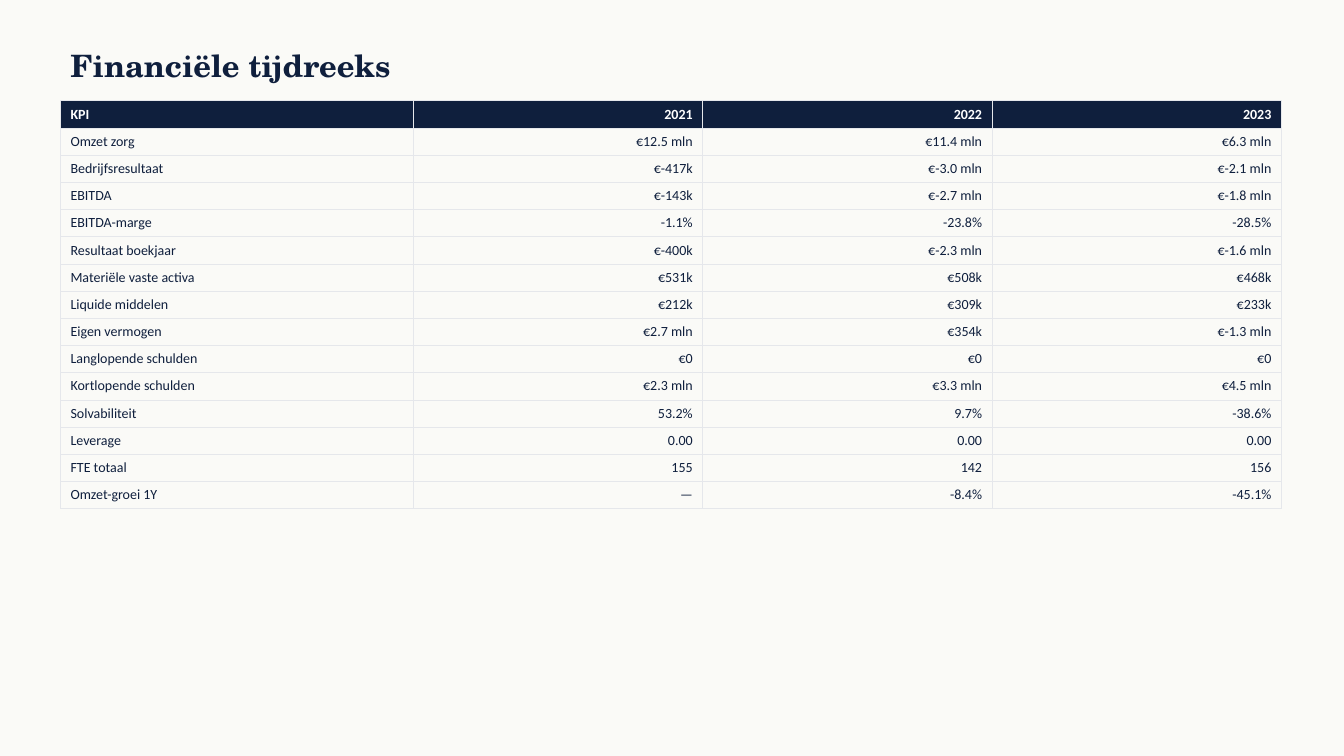
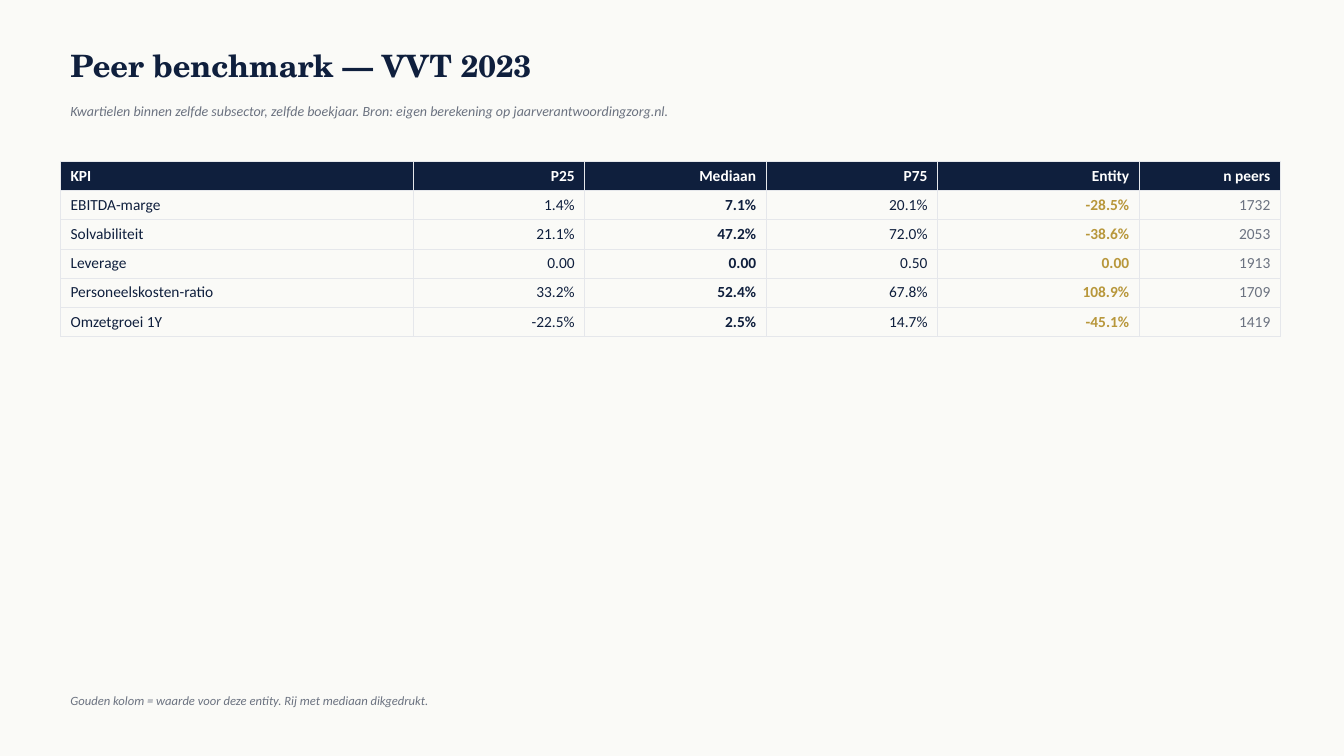
from pptx import Presentation
from pptx import util as u
from pptx.dml import color
from pptx.enum import text
from pptx.oxml import parse_xml
from pptx.oxml import ns

PX = 9144
COLORS = {
    "paper": "FAFAF7",
    "navy": "0F1F3D",
    "white": "FFFFFF",
    "grey": "6B7280",
    "gold": "B8973B",
    "rule": "E5E7EB",
}

YEAR_ROWS = [
    ("KPI", "2021", "2022", "2023"),
    ("Omzet zorg", "€12.5 mln", "€11.4 mln", "€6.3 mln"),
    ("Bedrijfsresultaat", "€-417k", "€-3.0 mln", "€-2.1 mln"),
    ("EBITDA", "€-143k", "€-2.7 mln", "€-1.8 mln"),
    ("EBITDA-marge", "-1.1%", "-23.8%", "-28.5%"),
    ("Resultaat boekjaar", "€-400k", "€-2.3 mln", "€-1.6 mln"),
    ("Materiële vaste activa", "€531k", "€508k", "€468k"),
    ("Liquide middelen", "€212k", "€309k", "€233k"),
    ("Eigen vermogen", "€2.7 mln", "€354k", "€-1.3 mln"),
    ("Langlopende schulden", "€0", "€0", "€0"),
    ("Kortlopende schulden", "€2.3 mln", "€3.3 mln", "€4.5 mln"),
    ("Solvabiliteit", "53.2%", "9.7%", "-38.6%"),
    ("Leverage", "0.00", "0.00", "0.00"),
    ("FTE totaal", "155", "142", "156"),
    ("Omzet-groei 1Y", "—", "-8.4%", "-45.1%"),
]

PEER_ROWS = [
    ("KPI", "P25", "Mediaan", "P75", "Entity", "n peers"),
    ("EBITDA-marge", "1.4%", "7.1%", "20.1%", "-28.5%", "1732"),
    ("Solvabiliteit", "21.1%", "47.2%", "72.0%", "-38.6%", "2053"),
    ("Leverage", "0.00", "0.00", "0.50", "0.00", "1913"),
    ("Personeelskosten-ratio", "33.2%", "52.4%", "67.8%", "108.9%", "1709"),
    ("Omzetgroei 1Y", "-22.5%", "2.5%", "14.7%", "-45.1%", "1419"),
]


class Deck:
    title_font = "TeX Gyre Schola"
    body_font = "Calibri"
    left = 60
    text_width = 1200

    def __init__(self):
        self.prs = Presentation()
        self.prs.slide_width = 1333 * PX
        self.prs.slide_height = 750 * PX
        self.s = None

    def rgb(self, name):
        return color.RGBColor.from_string(COLORS[name])

    def slide(self, title):
        self.s = self.prs.slides.add_slide(self.prs.slide_layouts[6])
        fill = self.s.background.fill
        fill.solid()
        fill.fore_color.rgb = self.rgb("paper")
        self.text(title, 40, 50, 22, "navy", self.title_font, bold=True)

    def run(self, p, words, size, ink, font=None, bold=False, italic=False):
        r = p.add_run()
        r.text = words
        r.font.name = font or self.body_font
        r.font.size = u.Pt(size)
        r.font.bold = bold
        r.font.italic = italic
        r.font.color.rgb = self.rgb(ink)

    def text(self, words, top, height, size, ink, font=None, **style):
        box = self.s.shapes.add_textbox(
            self.left * PX, top * PX, self.text_width * PX, height * PX)
        tf = box.text_frame
        tf.word_wrap = True
        tf.vertical_anchor = text.MSO_ANCHOR.MIDDLE
        self.run(tf.paragraphs[0], words, size, ink, font, **style)

    def note(self, words, top, size):
        self.text(words, top, 30, size, "grey", italic=True)

    def borders(self, cell):
        tc_pr = cell._tc.get_or_add_tcPr()
        for side in "LRTB":
            tc_pr.append(parse_xml(
                f'<a:ln{side} {ns.nsdecls("a")} w="6350"><a:solidFill>'
                f'<a:srgbClr val="{COLORS["rule"]}"/></a:solidFill></a:ln{side}>'))

    def table(self, rows, top, widths, row_height, size, column_inks=None, bold_columns=()):
        column_inks = column_inks or {}
        table = self.s.shapes.add_table(
            len(rows), len(widths), self.left * PX, top * PX,
            sum(widths) * PX, len(rows) * row_height * PX).table
        table.first_row = False
        table.horz_banding = False
        for column, width in zip(table.columns, widths):
            column.width = width * PX
        for i, values in enumerate(rows):
            table.rows[i].height = row_height * PX
            for j, value in enumerate(values):
                cell = table.cell(i, j)
                self.borders(cell)
                header = i == 0
                if header:
                    cell.fill.solid()
                    cell.fill.fore_color.rgb = self.rgb("navy")
                else:
                    cell.fill.background()
                p = cell.text_frame.paragraphs[0]
                if j:
                    p.alignment = text.PP_ALIGN.RIGHT
                ink = "white" if header else column_inks.get(j, "navy")
                self.run(p, value, size, ink, bold=header or j in bold_columns)


def main():
    deck = Deck()

    deck.slide("Financiële tijdreeks")
    deck.table(YEAR_ROWS, 100, [350] + [287] * 3, 27, 10)

    deck.slide("Peer benchmark — VVT 2023")
    deck.note("Kwartielen binnen zelfde subsector, zelfde boekjaar. "
              "Bron: eigen berekening op jaarverantwoordingzorg.nl.", 95, 10)
    deck.table(PEER_ROWS, 160, [350, 170, 180, 170, 200, 140], 29, 11,
               column_inks={4: "gold", 5: "grey"}, bold_columns=(2, 4))
    deck.note("Gouden kolom = waarde voor deze entity. Rij met mediaan dikgedrukt.", 680, 9)

    deck.prs.save("out.pptx")


if __name__ == "__main__":
    main()
